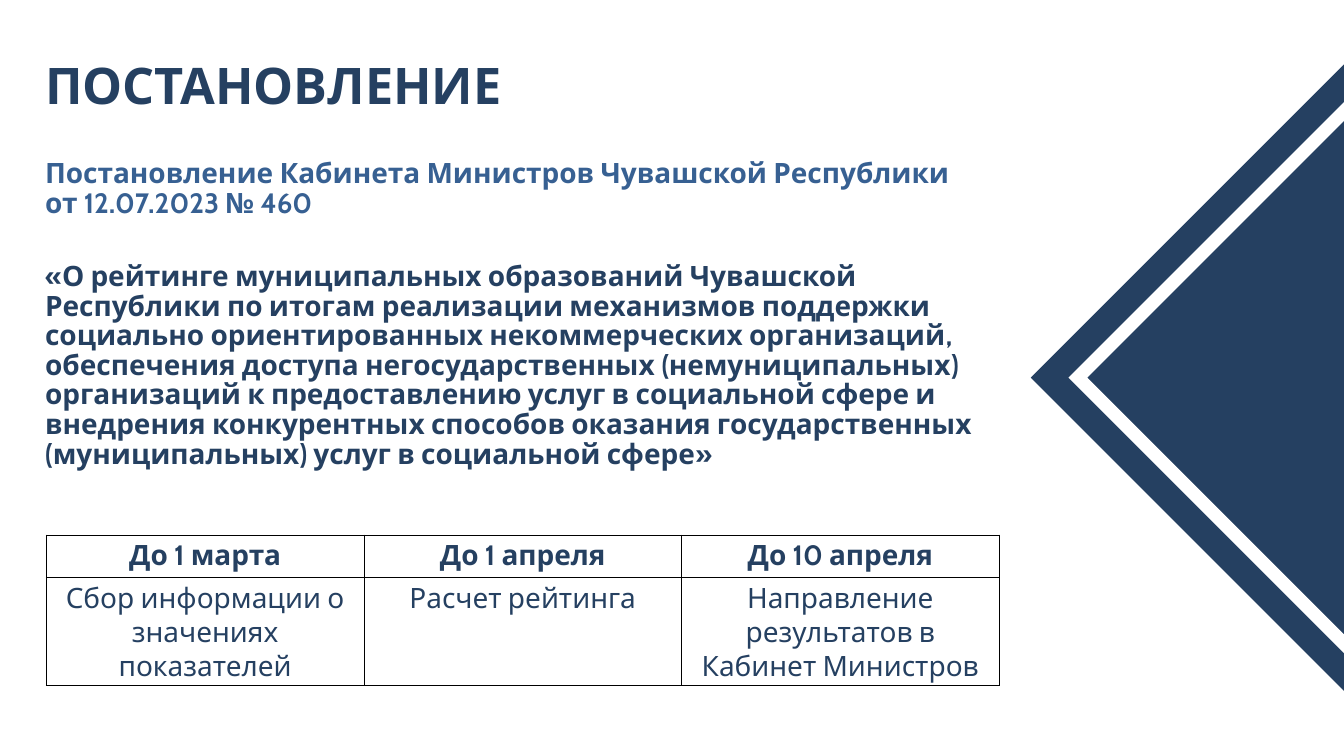
"""Build a slide on a government resolution with its yearly schedule."""
from dataclasses import dataclass

from lxml import etree
from pptx import Presentation
from pptx import util as u
from pptx.dml.color import RGBColor
from pptx.enum import text
from pptx.oxml import ns


@dataclass(frozen=True)
class Theme:
    font: str = "Cabin"
    navy: str = "254061"
    blue: str = "376092"
    white: str = "FFFFFF"
    border: str = "000000"
    title: int = 54
    body: int = 30


class Deck:
    def __init__(self, theme, width, height):
        self.theme = theme
        self.prs = Presentation()
        self.prs.slide_width = u.Inches(width)
        self.prs.slide_height = u.Inches(height)
        self.s = self.prs.slides.add_slide(self.prs.slide_layouts[6])

    def run(self, p, words, size, color, bold=True):
        r = p.add_run()
        r.text = words
        r.font.name = self.theme.font
        r.font.size = u.Pt(size)
        r.font.bold = bold
        r.font.color.rgb = RGBColor.from_string(color)

    def text(self, box, lines, size, color, spacing):
        sp = self.s.shapes.add_textbox(*map(u.Inches, box))
        tf = sp.text_frame
        tf.word_wrap = True
        tf.auto_size = text.MSO_AUTO_SIZE.SHAPE_TO_FIT_TEXT
        tf.margin_left = tf.margin_right = tf.margin_top = tf.margin_bottom = 0
        for i, line in enumerate(lines):
            p = tf.add_paragraph() if i else tf.paragraphs[0]
            p.line_spacing = u.Pt(spacing)
            self.run(p, line, size, color)

    def table(self, box, heights, rows):
        frame = self.s.shapes.add_table(len(rows), len(rows[0]), *map(u.Inches, box))
        table = frame.table
        table.first_row = table.horz_banding = False
        for i, (height, row) in enumerate(zip(heights, rows)):
            table.rows[i].height = u.Inches(height)
            for j, words in enumerate(row):
                cell = table.cell(i, j)
                p = cell.text_frame.paragraphs[0]
                p.alignment = text.PP_ALIGN.CENTER
                self.run(p, words, self.theme.body, self.theme.navy, bold=i == 0)
                self.borders(cell)
                cell.fill.background()

    def borders(self, cell):
        tc_pr = cell._tc.get_or_add_tcPr()
        for side in ("a:lnL", "a:lnR", "a:lnT", "a:lnB"):
            ln = etree.SubElement(tc_pr, ns.qn(side), w=str(u.Pt(1)))
            fill = etree.SubElement(ln, ns.qn("a:solidFill"))
            etree.SubElement(fill, ns.qn("a:srgbClr"), val=self.theme.border)

    def diamond(self, center, radius, color, hole=None):
        cx, cy = center

        def corners(rad, turn):
            points = [(cx, cy - turn * rad), (cx - rad, cy),
                      (cx, cy + turn * rad), (cx + rad, cy)]
            return [(u.Inches(x), u.Inches(y)) for x, y in points]

        outer = corners(radius, 1)
        builder = self.s.shapes.build_freeform(*outer[0])
        builder.add_line_segments(outer[1:], close=True)
        if hole:
            inner = corners(hole, -1)
            builder.move_to(*inner[0])
            builder.add_line_segments(inner[1:], close=True)
        sp = builder.convert_to_shape()
        sp.shadow.inherit = False
        sp.fill.solid()
        sp.fill.fore_color.rgb = RGBColor.from_string(color)
        sp.line.fill.background()


def main():
    theme = Theme()
    deck = Deck(theme, 20, 11.25)
    deck.text((0.67, 2.38, 14.18, 0.9),
              ["Постановление Кабинета Министров Чувашской Республики",
               "от 12.07.2023 № 460"],
              theme.body, theme.blue, 31.8)
    deck.text((0.67, 3.91, 13.82, 3.14),
              ["«О рейтинге муниципальных образований Чувашской Республики "
               "по итогам реализации механизмов поддержки социально "
               "ориентированных некоммерческих организаций, обеспечения "
               "доступа негосударственных (немуниципальных) организаций "
               "к предоставлению услуг в социальной сфере и внедрения "
               "конкурентных способов оказания государственных "
               "(муниципальных) услуг в социальной сфере»"],
              theme.body, theme.navy, 31.7)
    deck.text((0.67, 0.76, 7.68, 0.87), ["ПОСТАНОВЛЕНИЕ"],
              theme.title, theme.navy, 68.2)
    deck.table((0.69, 7.96, 14.18, 2.24), (0.64, 1.6), [
        ("До 1 марта", "До 1 апреля", "До 10 апреля"),
        ("Сбор информации о значениях показателей", "Расчет рейтинга",
         "Направление результатов в Кабинет Министров"),
    ])
    center = (20.42, 5.62)
    deck.diamond(center, 5.08, theme.navy)
    deck.diamond(center, 4.52, theme.white, hole=4.24)
    deck.prs.save("out.pptx")


if __name__ == "__main__":
    main()
